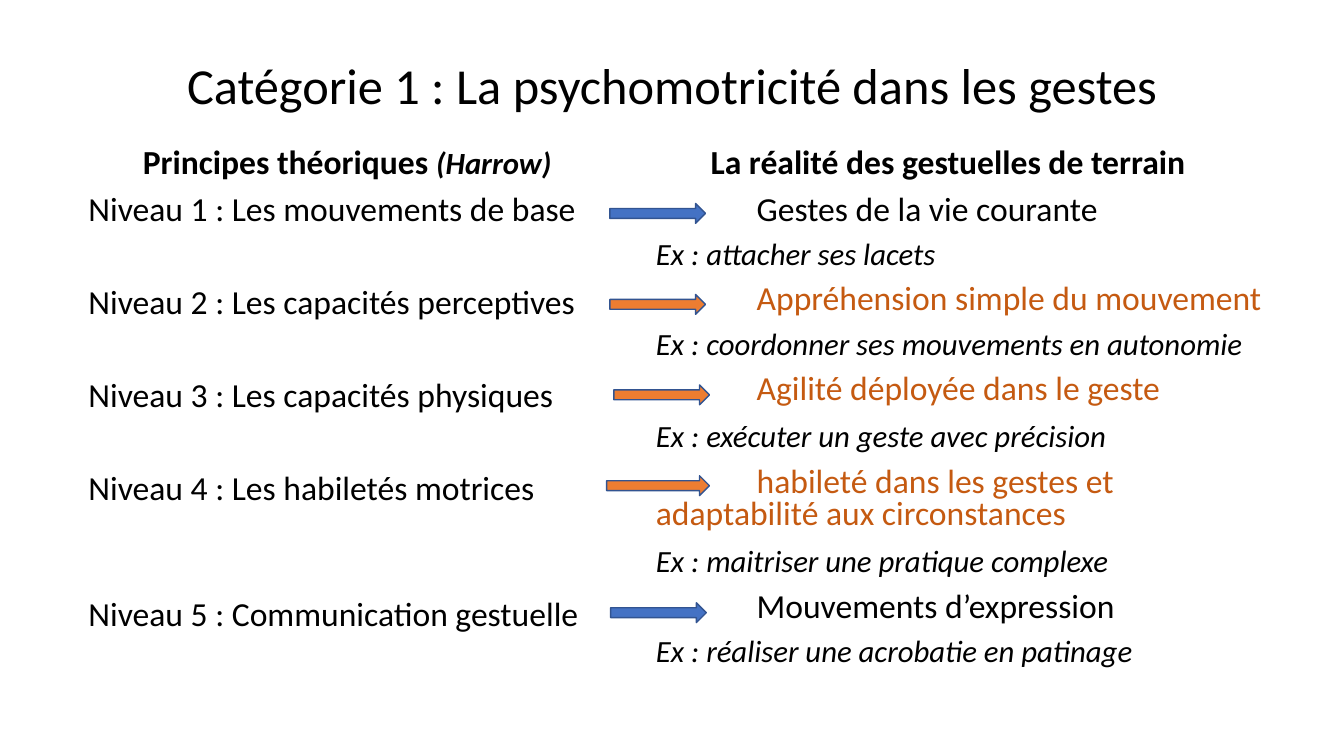
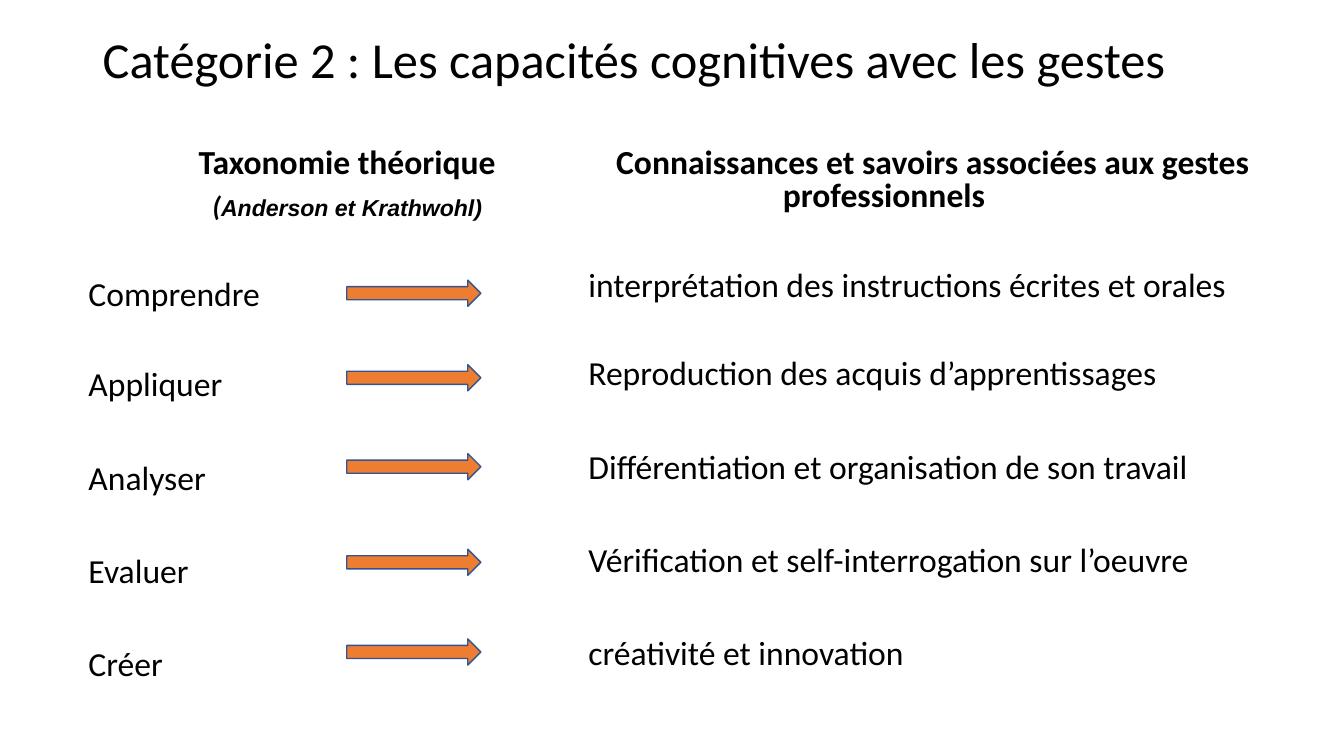
from dataclasses import dataclass

from pptx import Presentation
from pptx.dml.color import RGBColor
from pptx.enum.shapes import MSO_SHAPE
from pptx.enum.text import MSO_ANCHOR, PP_ALIGN
from pptx.util import Cm, Pt

ARROW = MSO_SHAPE.RIGHT_ARROW
MIDDLE, TOP = MSO_ANCHOR.MIDDLE, MSO_ANCHOR.TOP
LEFT, CENTER = PP_ALIGN.LEFT, PP_ALIGN.CENTER


class Theme:
    font = "Calibri"
    alt_font = "Arial"
    title, body, example, bracket, author = 36, 24, 22, 20, 16.5
    text = "000000"
    accent = "C55A11"
    blue, orange, outline = "4472C4", "ED7D31", "325491"
    title_spacing, body_spacing = 0.9, 0.8
    before = 10


@dataclass
class Para:
    """A paragraph; before is in points, margin and indent are in cm."""
    text: str
    size: float = Theme.body
    bold: bool = False
    italic: bool = False
    color: str = Theme.text
    align: PP_ALIGN = LEFT
    before: float = Theme.before
    margin: float = 0
    indent: float = 0
    tail: tuple = ()  # text, size, font of a closing italic run


def heading(text, **style):
    return Para(text, bold=True, **style)


def answer(text, color=Theme.text):
    return Para(text, color=color, indent=2.54)


def example(text, before=Theme.before):
    return Para(text, Theme.example, italic=True, before=before)


def spaced(items):
    """Turn (text, space before) pairs into paragraphs."""
    return [Para(text, before=before) for text, before in items]


# Boxes are left, top, width, height in cm; arrows add a colour.
SLIDES = [
    dict(
        title="Catégorie 1 : La psychomotricité dans les gestes",
        title_box=(2.34, 0.84, 29.21, 2.79),
        title_align=CENTER,
        columns=[
            ((1.98, 3.63, 13.54, 13.64), [
                heading("Principes théoriques ", align=CENTER,
                        tail=("(Harrow)", Theme.example, Theme.font)),
                *spaced([
                    ("Niveau 1 : Les mouvements de base", 10),
                    ("Niveau 2 : Les capacités perceptives", 43.5),
                    ("Niveau 3 : Les capacités physiques", 43.5),
                    ("Niveau 4 : Les habiletés motrices", 43.5),
                    ("Niveau 5 : Communication gestuelle", 67),
                ]),
            ]),
            ((16.28, 3.63, 15.98, 14.5), [
                heading("La réalité des gestuelles de terrain", margin=1.38),
                answer("Gestes de la vie courante"),
                example("Ex : attacher ses lacets"),
                answer("Appréhension simple du mouvement", Theme.accent),
                example("Ex : coordonner ses mouvements en autonomie"),
                answer("Agilité déployée dans le geste", Theme.accent),
                example("Ex : exécuter un geste avec précision", 12),
                answer("habileté dans les gestes et adaptabilité aux circonstances",
                       Theme.accent),
                example("Ex : maitriser une pratique complexe", 12),
                answer("Mouvements d’expression"),
                example("Ex : réaliser une acrobatie en patinage"),
            ]),
        ],
        arrows=[
            (15.37, 5.13, 2.41, 0.5, Theme.blue),
            (15.37, 7.42, 2.41, 0.5, Theme.orange),
            (15.47, 9.7, 2.41, 0.5, Theme.orange),
            (15.29, 11.99, 2.59, 0.5, Theme.orange),
            (15.39, 15.19, 2.41, 0.5, Theme.blue),
        ],
    ),
    dict(
        title="Catégorie 2 : Les capacités cognitives avec les gestes",
        title_box=(2.34, 0.84, 30.12, 1.45),
        title_align=LEFT,
        columns=[
            ((1.98, 3.63, 13.54, 14.27), [
                heading("Taxonomie théorique", align=CENTER),
                Para("(", Theme.bracket, bold=True, italic=True, align=CENTER,
                     tail=("Anderson et Krathwohl)", Theme.author, Theme.alt_font)),
                *spaced([
                    ("Comprendre", 41.7),
                    ("Appliquer", 41.7),
                    ("Analyser", 43.5),
                    ("Evaluer", 43.5),
                    ("Créer", 43.5),
                ]),
            ]),
            ((14.58, 3.63, 17.88, 14.27), [
                heading("Connaissances et savoirs associées aux gestes professionnels",
                        margin=4.9, indent=-4.2),
                *spaced([
                    ("interprétation des instructions écrites et orales", 41.7),
                    ("Reproduction des acquis d’apprentissages", 40),
                    ("Différentiation et organisation de son travail", 43.5),
                    ("Vérification et self-interrogation sur l’oeuvre", 43.5),
                    ("créativité et innovation", 43.5),
                ]),
            ]),
        ],
        arrows=[(8.74, top, 3.38, 0.66, Theme.orange)
                for top in (7.06, 9.19, 11.43, 13.84, 16.1)],
    ),
]


def rgb(color):
    return RGBColor.from_string(color)


def add_text(slide, box, paras, spacing, anchor=TOP):
    tf = slide.shapes.add_textbox(*map(Cm, box)).text_frame
    tf.word_wrap = True
    tf.vertical_anchor = anchor
    for i, para in enumerate(paras):
        p = tf.add_paragraph() if i else tf.paragraphs[0]
        p.alignment = para.align
        p.line_spacing = spacing
        p.space_before = Pt(para.before)
        pPr = p._p.get_or_add_pPr()
        pPr.set("marL", str(Cm(para.margin)))
        pPr.set("indent", str(Cm(para.indent)))
        p.font.name = Theme.font
        p.font.size = Pt(para.size)
        p.font.bold = para.bold
        p.font.italic = para.italic
        p.font.color.rgb = rgb(para.color)
        p.add_run().text = para.text
        if para.tail:
            r = p.add_run()
            r.text, size, r.font.name = para.tail
            r.font.size = Pt(size)
            r.font.italic = True


def add_arrow(slide, left, top, width, height, color):
    sp = slide.shapes.add_shape(ARROW, Cm(left), Cm(top), Cm(width), Cm(height))
    sp.shadow.inherit = False
    sp.fill.solid()
    sp.fill.fore_color.rgb = rgb(color)
    sp.line.color.rgb = rgb(Theme.outline)
    sp.line.width = Pt(1)


def main():
    prs = Presentation()
    prs.slide_width, prs.slide_height = Cm(33.87), Cm(19.05)
    blank = prs.slide_layouts[6]
    for content in SLIDES:
        s = prs.slides.add_slide(blank)
        title = Para(content["title"], Theme.title,
                     align=content["title_align"], before=0)
        add_text(s, content["title_box"], [title], Theme.title_spacing, MIDDLE)
        for box, paras in content["columns"]:
            add_text(s, box, paras, Theme.body_spacing)
        for arrow in content["arrows"]:
            add_arrow(s, *arrow)
    prs.save("out.pptx")


if __name__ == "__main__":
    main()
